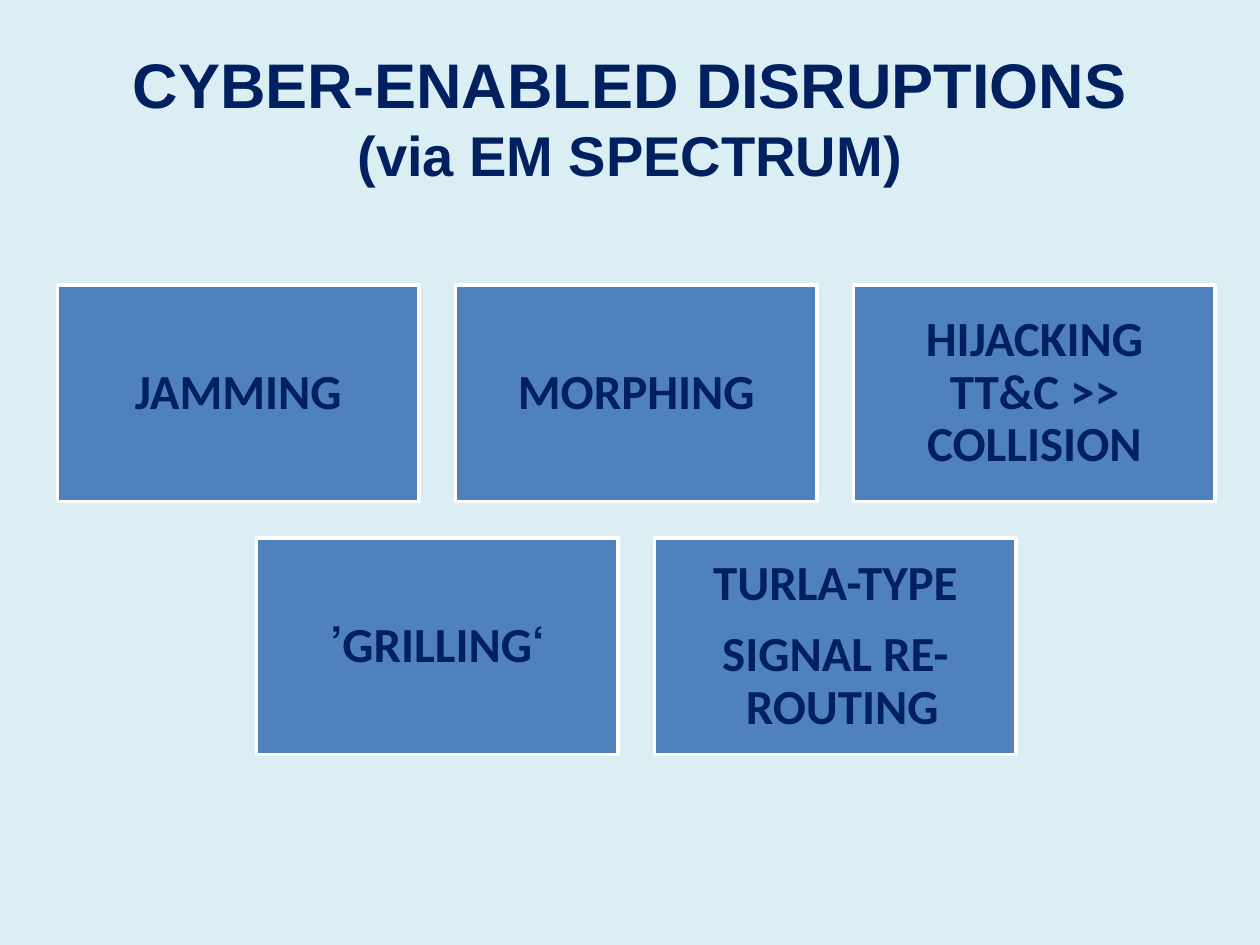
from pptx import Presentation
from pptx.dml.color import RGBColor
from pptx.enum.shapes import MSO_SHAPE as Shape
from pptx.enum.text import MSO_ANCHOR as Anchor, PP_ALIGN as Align
from pptx.util import Inches, Pt

TITLE_LINES = [("CYBER-ENABLED DISRUPTIONS", 36), ("(via EM SPECTRUM)", 32)]
DISRUPTION_ROWS = [
    [["JAMMING"], ["MORPHING"], ["HIJACKING TT&C >> COLLISION"]],
    [["‘GRILLING’"], ["TURLA-TYPE", "SIGNAL RE-ROUTING "]],
]

PALE_BLUE = RGBColor(0xDB, 0xEE, 0xF4)
BLUE = RGBColor(0x4F, 0x81, 0xBD)
NAVY = RGBColor(0x00, 0x20, 0x60)
WHITE = RGBColor(0xFF, 0xFF, 0xFF)

BOX_WIDTH, BOX_HEIGHT, GAP = 2.87, 1.72, 0.29
GRID_CENTER, GRID_TOP = 5.05, 2.26
BOX_MARGIN = Inches(0.12)


def style_paragraph(paragraph, font_name):
    paragraph.alignment = Align.CENTER
    paragraph._p.get_or_add_pPr().set("rtl", "1")
    paragraph.font.name = font_name
    paragraph.font.bold = True
    paragraph.font.color.rgb = NAVY


def add_title(slide):
    title = slide.shapes.add_textbox(Inches(0.5), Inches(0.3), Inches(9), Inches(1.25))
    frame = title.text_frame
    frame.word_wrap = True
    frame.vertical_anchor = Anchor.MIDDLE
    heading = frame.paragraphs[0]
    style_paragraph(heading, "Arial")
    for index, (line, size) in enumerate(TITLE_LINES):
        if index:
            heading.add_line_break()
        run = heading.add_run()
        run.text = line
        run.font.size = Pt(size)


def add_disruption(slide, lines, left, top):
    box = slide.shapes.add_shape(
        Shape.RECTANGLE, Inches(left), Inches(top), Inches(BOX_WIDTH), Inches(BOX_HEIGHT)
    )
    box.shadow.inherit = False
    box.fill.solid()
    box.fill.fore_color.rgb = BLUE
    box.line.color.rgb = WHITE
    box.line.width = Pt(2)
    frame = box.text_frame
    frame.word_wrap = True
    frame.vertical_anchor = Anchor.MIDDLE
    frame.margin_left = frame.margin_right = BOX_MARGIN
    frame.margin_top = frame.margin_bottom = BOX_MARGIN
    frame.text = "\n".join(lines)
    for paragraph in frame.paragraphs:
        style_paragraph(paragraph, "Calibri")
        paragraph.font.size = Pt(28)
        paragraph.line_spacing = 0.9
        paragraph.space_after = Pt(10)


def main():
    deck = Presentation()
    deck.slide_width, deck.slide_height = Inches(10), Inches(7.5)
    slide = deck.slides.add_slide(deck.slide_layouts[6])
    slide.background.fill.solid()
    slide.background.fill.fore_color.rgb = PALE_BLUE
    add_title(slide)
    for row, disruptions in enumerate(DISRUPTION_ROWS):
        row_width = len(disruptions) * (BOX_WIDTH + GAP) - GAP
        row_left = GRID_CENTER - row_width / 2
        top = GRID_TOP + row * (BOX_HEIGHT + GAP)
        for column, lines in enumerate(disruptions):
            add_disruption(slide, lines, row_left + column * (BOX_WIDTH + GAP), top)
    deck.save("out.pptx")


if __name__ == "__main__":
    main()
